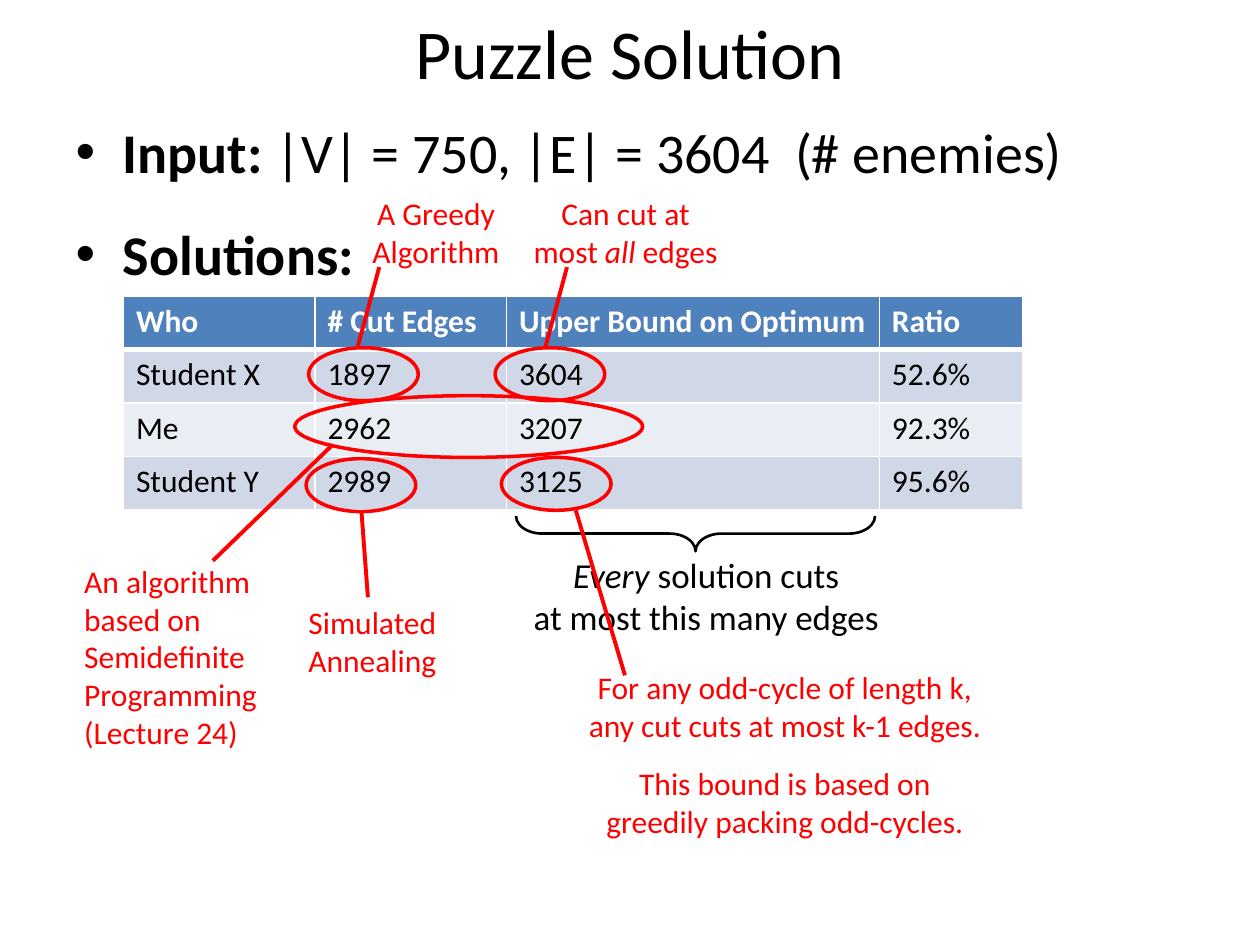
from dataclasses import dataclass

from lxml import etree
from pptx import Presentation
from pptx import util as u
from pptx.dml.color import RGBColor
from pptx.enum import shapes, text
from pptx.oxml import ns

BLACK = RGBColor(0x00, 0x00, 0x00)
WHITE = RGBColor(0xFF, 0xFF, 0xFF)
RED = RGBColor(0xFF, 0x00, 0x00)
HEADER_BLUE = RGBColor(0x4F, 0x81, 0xBD)
BANDS = (RGBColor(0xD0, 0xD8, 0xE8), RGBColor(0xE9, 0xED, 0xF4))
FONT = "Calibri"

# The slide is a grid of 100 columns by 75 rows
presentation = Presentation()
presentation.slide_width, presentation.slide_height = u.Inches(10), u.Inches(7.5)
COLUMN = presentation.slide_width // 100
ROW = presentation.slide_height // 75
slide = presentation.slides.add_slide(presentation.slide_layouts[1])


@dataclass
class Box:
    column: float
    row: float
    columns: float
    rows: float

    def lengths(self) -> tuple:
        return (int(self.column * COLUMN), int(self.row * ROW),
                int(self.columns * COLUMN), int(self.rows * ROW))


@dataclass
class Run:
    words: str
    bold: bool = False
    italic: bool = False


@dataclass
class Note:
    box: Box
    paragraphs: list
    alignment: text.PP_ALIGN = text.PP_ALIGN.CENTER
    size: int = 18
    color: RGBColor = RED
    gap: float = 0


@dataclass
class Callout:
    oval: Box
    note: Note
    pointer: tuple  # start column, start row, end column, end row


def place(shape, box: Box) -> None:
    shape.left, shape.top, shape.width, shape.height = box.lengths()


def write(paragraph, runs: list, size: float, color: RGBColor) -> None:
    for item in runs:
        for index, line in enumerate(item.words.split("\n")):
            if index:
                paragraph.add_line_break()
            run = paragraph.add_run()
            run.text = line
            run.font.name, run.font.size = FONT, u.Pt(size)
            run.font.bold, run.font.italic = item.bold, item.italic
            run.font.color.rgb = color


def fill_frame(frame, note: Note) -> None:
    for index, runs in enumerate(note.paragraphs):
        paragraph = frame.add_paragraph() if index else frame.paragraphs[0]
        paragraph.alignment = note.alignment
        if index and note.gap:
            paragraph.space_before = u.Pt(note.gap)
        write(paragraph, runs, note.size, note.color)


def add_note(note: Note) -> None:
    frame = slide.shapes.add_textbox(*note.box.lengths()).text_frame
    frame.word_wrap = False
    frame.auto_size = text.MSO_AUTO_SIZE.SHAPE_TO_FIT_TEXT
    fill_frame(frame, note)


def add_outline(kind: shapes.MSO_SHAPE, box: Box, color: RGBColor, width: float):
    shape = slide.shapes.add_shape(kind, *box.lengths())
    shape.shadow.inherit = False
    shape.fill.background()
    shape.line.color.rgb, shape.line.width = color, u.Pt(width)
    return shape


def add_pointer(start_column: float, start_row: float,
                end_column: float, end_row: float) -> None:
    line = slide.shapes.add_connector(
        shapes.MSO_CONNECTOR.STRAIGHT,
        int(start_column * COLUMN), int(start_row * ROW),
        int(end_column * COLUMN), int(end_row * ROW))
    line.line.color.rgb, line.line.width = RED, u.Pt(2.25)
    etree.SubElement(line._element.spPr, ns.qn("a:effectLst"))


def add_callout(callout: Callout) -> None:
    add_outline(shapes.MSO_SHAPE.OVAL, callout.oval, RED, 2)
    add_note(callout.note)
    add_pointer(*callout.pointer)


def add_border(cell, side: str, width: float) -> None:
    line = etree.SubElement(cell._tc.get_or_add_tcPr(), ns.qn("a:ln" + side),
                            w=str(u.Pt(width)))
    solid = etree.SubElement(line, ns.qn("a:solidFill"))
    etree.SubElement(solid, ns.qn("a:srgbClr"), val=str(WHITE))


def add_table(box: Box, widths: tuple, rows: list) -> None:
    table = slide.shapes.add_table(len(rows), len(widths), *box.lengths()).table
    for column, width in zip(table.columns, widths):
        column.width = int(width * COLUMN)
    for r, values in enumerate(rows):
        header = r == 0
        for c, value in enumerate(values):
            cell = table.cell(r, c)
            for side in "LRTB":
                thick = (r, side) in ((0, "B"), (1, "T"))
                add_border(cell, side, 3 if thick else 1)
            cell.fill.solid()
            cell.fill.fore_color.rgb = HEADER_BLUE if header else BANDS[(r - 1) % 2]
            write(cell.text_frame.paragraphs[0], [Run(value, bold=header)], 18,
                  WHITE if header else BLACK)


# Title and list
title, body = slide.placeholders
place(title, Box(5, -1, 90, 10.1))
fill_frame(title.text_frame, Note(None, [[Run("Puzzle Solution")]], size=40, color=BLACK))
place(body, Box(5, 8.8, 90, 63.1))
fill_frame(body.text_frame, Note(
    None,
    [[Run("Input:", bold=True), Run(" |V| = 750, |E| = 3604  (# enemies)")],
     [Run("Solutions:", bold=True)]],
    text.PP_ALIGN.LEFT, 32, BLACK, gap=20))

# Results
add_table(Box(9.8, 23.5, 71.4, 17), (15.2, 15.2, 29.6, 11.4), [
    ("Who", "# Cut Edges", "Upper Bound on Optimum", "Ratio"),
    ("Student X", "1897", "3604", "52.6%"),
    ("Me", "2962", "3207", "92.3%"),
    ("Student Y", "2989", "3125", "95.6%"),
])

# Brace under the upper bounds
brace = add_outline(shapes.MSO_SHAPE.RIGHT_BRACE, Box(53.8, 28.1, 2.8, 28.5), BLACK, 1.5)
brace.rotation = 90
brace.adjustments[0] = 0.74
add_note(Note(Box(41.2, 43.4, 29.7, 7.7),
              [[Run("Every", italic=True), Run(" solution cuts\nat most this many edges")]],
              size=20, color=BLACK))

# Circled values with their explanations
SMALL = (8.7, 4.2)
CALLOUTS = [
    Callout(Box(23.4, 31.4, 27.6, 4.9),
            Note(Box(5.7, 44.1, 15.8, 16.2),
                 [[Run("An algorithm\nbased on")], [Run("Semidefinite\nProgramming")],
                  [Run("(Lecture 24)")]], text.PP_ALIGN.LEFT),
            (16.9, 44.5, 26.4, 35.3)),
    Callout(Box(24.3, 36.4, *SMALL),
            Note(Box(23.5, 47.4, 12.3, 7.1), [[Run("Simulated\nAnnealing")]],
                 text.PP_ALIGN.LEFT),
            (29.2, 47.4, 28.7, 40.7)),
    Callout(Box(24.5, 27.6, *SMALL),
            Note(Box(28.5, 14.9, 12.2, 7.1), [[Run("A Greedy\nAlgorithm")]]),
            (28.4, 27.5, 30.1, 21.2)),
    Callout(Box(39.3, 27.6, *SMALL),
            Note(Box(41.3, 14.9, 16.7, 7.1),
                 [[Run("Can cut at\nmost "), Run("all", italic=True), Run(" edges")]]),
            (43.3, 27.5, 45, 21.2)),
    Callout(Box(39.8, 36.3, *SMALL),
            Note(Box(45.5, 52.5, 33.6, 14.8),
                 [[Run("For any odd-cycle of length k,\nany cut cuts at most k-1 edges.")],
                  [Run("This bound is based on\ngreedily packing odd-cycles.")]], gap=12),
            (49.6, 53.6, 45.7, 40.5)),
]
for callout in CALLOUTS:
    add_callout(callout)

presentation.save("out.pptx")
